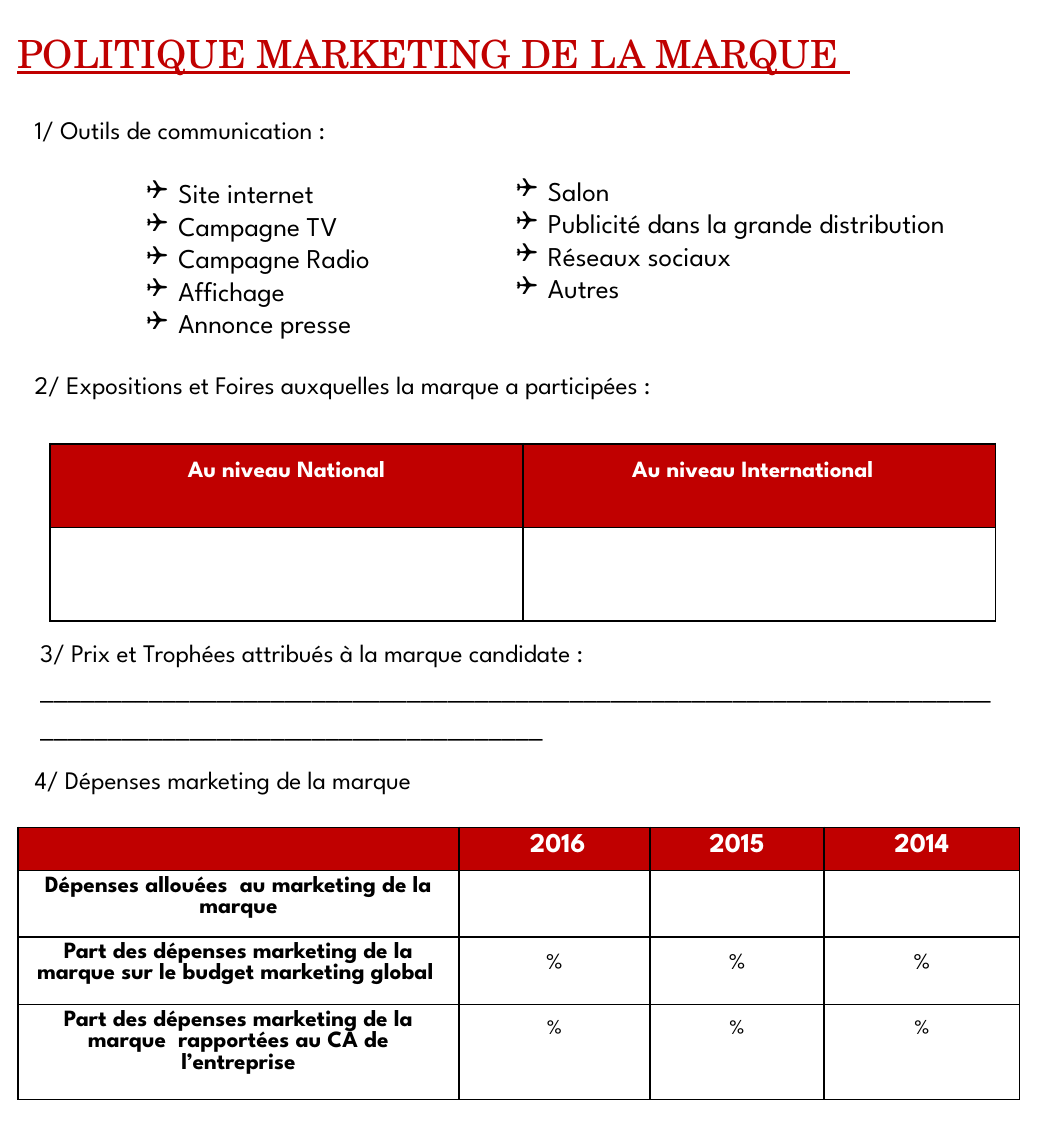
from dataclasses import dataclass
from lxml.etree import SubElement
from pptx import Presentation
from pptx.dml.color import RGBColor
from pptx.enum.text import MSO_ANCHOR, MSO_AUTO_SIZE, PP_ALIGN
from pptx.oxml.ns import qn
from pptx.util import Pt


@dataclass(frozen=True)
class Theme:
    sans: str = "League Spartan"
    serif: str = "TeX Gyre Schola"
    red: str = "C00000"
    black: str = "000000"
    white: str = "FFFFFF"
    title: int = 20
    list: int = 14
    head: int = 13
    cell: int = 12
    small: int = 11


class Form:
    def __init__(self, slide, theme):
        self.slide = slide
        self.theme = theme

    def apply(self, item, style):
        for name, value in style.items():
            setattr(item, name, value)

    def text(self, para, words, size, color, face=None, style=None, **font):
        self.apply(para, {"alignment": PP_ALIGN.LEFT, "space_before": Pt(0)} | (style or {}))
        run = para.add_run()
        run.text = words
        self.apply(run.font, {"name": face or self.theme.sans, "size": Pt(size)} | font)
        run.font.color.rgb = RGBColor.from_string(color)

    def place(self, shape, box):
        self.apply(shape, dict(zip(("left", "top", "width", "height"), map(Pt, box))))
        frame = shape.text_frame
        self.apply(frame, {
            "word_wrap": True, "auto_size": MSO_AUTO_SIZE.NONE,
            "vertical_anchor": MSO_ANCHOR.TOP,
            "margin_left": Pt(7.2), "margin_right": Pt(7.2),
            "margin_top": Pt(3.6), "margin_bottom": Pt(3.6)})
        return frame

    def title(self, words, box):
        t = self.theme
        frame = self.place(self.slide.shapes.title, box)
        self.apply(frame, {"margin_left": Pt(8.8), "vertical_anchor": MSO_ANCHOR.MIDDLE})
        self.text(frame.paragraphs[0], words, t.title, t.red, t.serif, underline=True)

    def list(self, index, items, box):
        t = self.theme
        frame = self.place(self.slide.placeholders[index], box)
        for i, item in enumerate(items):
            para = frame.add_paragraph() if i else frame.paragraphs[0]
            self.text(para, item, t.list, t.black)
            props = para._p.get_or_add_pPr()
            props.set("marL", str(Pt(16.5)))
            props.set("indent", str(-Pt(16.5)))
            SubElement(props, qn("a:buFont"), typeface="Wingdings")
            SubElement(props, qn("a:buChar"), char="❑")

    def head(self, words, box, **style):
        t = self.theme
        shape = self.slide.shapes.add_textbox(*map(Pt, box))
        shape.fill.solid()
        shape.fill.fore_color.rgb = RGBColor.from_string(t.white)
        frame = self.place(shape, box)
        self.text(frame.paragraphs[0], words, t.head, t.black, style=style)
        return frame

    def blank(self, frame, count, **style):
        t = self.theme
        self.text(frame.add_paragraph(), "_" * count, t.list, t.black, t.serif, style)

    def table(self, left, top, cols, rows, pad):
        shape = self.slide.shapes.add_table(
            len(rows), len(cols), Pt(left), Pt(top), Pt(sum(cols)), Pt(sum(rows)))
        grid = shape.table
        for col, width in zip(grid.columns, cols):
            col.width = Pt(width)
        for row, height in zip(grid.rows, rows):
            row.height = Pt(height)
        for r in range(len(rows)):
            for c in range(len(cols)):
                self.cell(grid.cell(r, c), r == 0, pad)
        return grid

    def cell(self, cell, top, pad):
        t = self.theme
        side, edge = map(Pt, pad)
        self.apply(cell, {"margin_left": side, "margin_right": side,
                          "margin_top": edge, "margin_bottom": edge})
        props = cell._tc.get_or_add_tcPr()
        for tag in ("lnL", "lnR", "lnT", "lnB"):
            line = SubElement(props, qn("a:" + tag), w=str(Pt(1)))
            fill = SubElement(line, qn("a:solidFill"))
            SubElement(fill, qn("a:srgbClr"), val=t.black)
        cell.fill.solid()
        cell.fill.fore_color.rgb = RGBColor.from_string(t.red if top else t.white)
        para = cell.text_frame.paragraphs[0]
        SubElement(para._p, qn("a:endParaRPr"), sz=str(t.cell * 100))

    def fill(self, cell, words, size, color, bold=True, **style):
        para = cell.text_frame.paragraphs[0]
        self.text(para, words, size, color, style={"alignment": PP_ALIGN.CENTER} | style, bold=bold)


def main():
    deck = Presentation()
    deck.slide_width, deck.slide_height = Pt(540), Pt(592.5)
    theme = Theme()
    form = Form(deck.slides.add_slide(deck.slide_layouts[3]), theme)

    form.title("POLITIQUE MARKETING DE LA MARQUE ", (0, 10, 502, 34.6))
    form.head("1/ Outils de communication :", (10.8, 55.4, 228, 23))
    form.list(1, ("Site internet", "Campagne TV", "Campagne Radio", "Affichage",
                  "Annonce presse"), (68.4, 87.4, 160, 92))
    form.list(2, ("Salon", "Publicité dans la grande distribution", "Réseaux sociaux",
                  "Autres"), (259.2, 86.2, 242.6, 92))
    form.head("2/ Expositions et Foires auxquelles la marque a participées :",
              (10.8, 185, 436, 25), line_spacing=1.15)

    fairs = form.table(25.9, 229, (244, 244), (43.2, 48.2), (7.2, 3.6))
    for c, name in enumerate(("Au niveau National", "Au niveau International  ")):
        form.fill(fairs.cell(0, c), name, theme.cell, theme.white, line_spacing=1.5)

    both = {"alignment": PP_ALIGN.JUSTIFY, "line_spacing": 1.15}
    prizes = form.head("3/ Prix et Trophées attribués à la marque candidate :",
                       (13.7, 323.3, 509, 64), **both)
    form.blank(prizes, 107, **both)
    form.head("4/ Dépenses marketing de la marque", (10.8, 391, 490, 23))

    costs = form.table(9.4, 427, (227.5, 98.6, 90, 100.8), (22.3, 34.2, 35, 49), (5, 2.9))
    for c, year in enumerate(("2016", "2015", "2014"), 1):
        if c == 1:
            form.fill(costs.cell(0, c), " ", theme.list, theme.white, False)
        form.fill(costs.cell(0, c), year, theme.list, theme.white)
        for r, size, gap in ((2, theme.cell, 6), (3, theme.small, 0)):
            form.fill(costs.cell(r, c), "%", size, theme.black, False,
                      line_spacing=1.5, space_before=Pt(gap))
    for r, label in enumerate((
            "Dépenses allouées  au marketing de la marque",
            "Part des dépenses marketing de la marque sur le budget marketing global ",
            "Part des dépenses marketing de la marque  rapportées au CA de l’entreprise"), 1):
        form.fill(costs.cell(r, 0), label, theme.cell, theme.black)

    deck.save("out.pptx")


if __name__ == "__main__":
    main()
